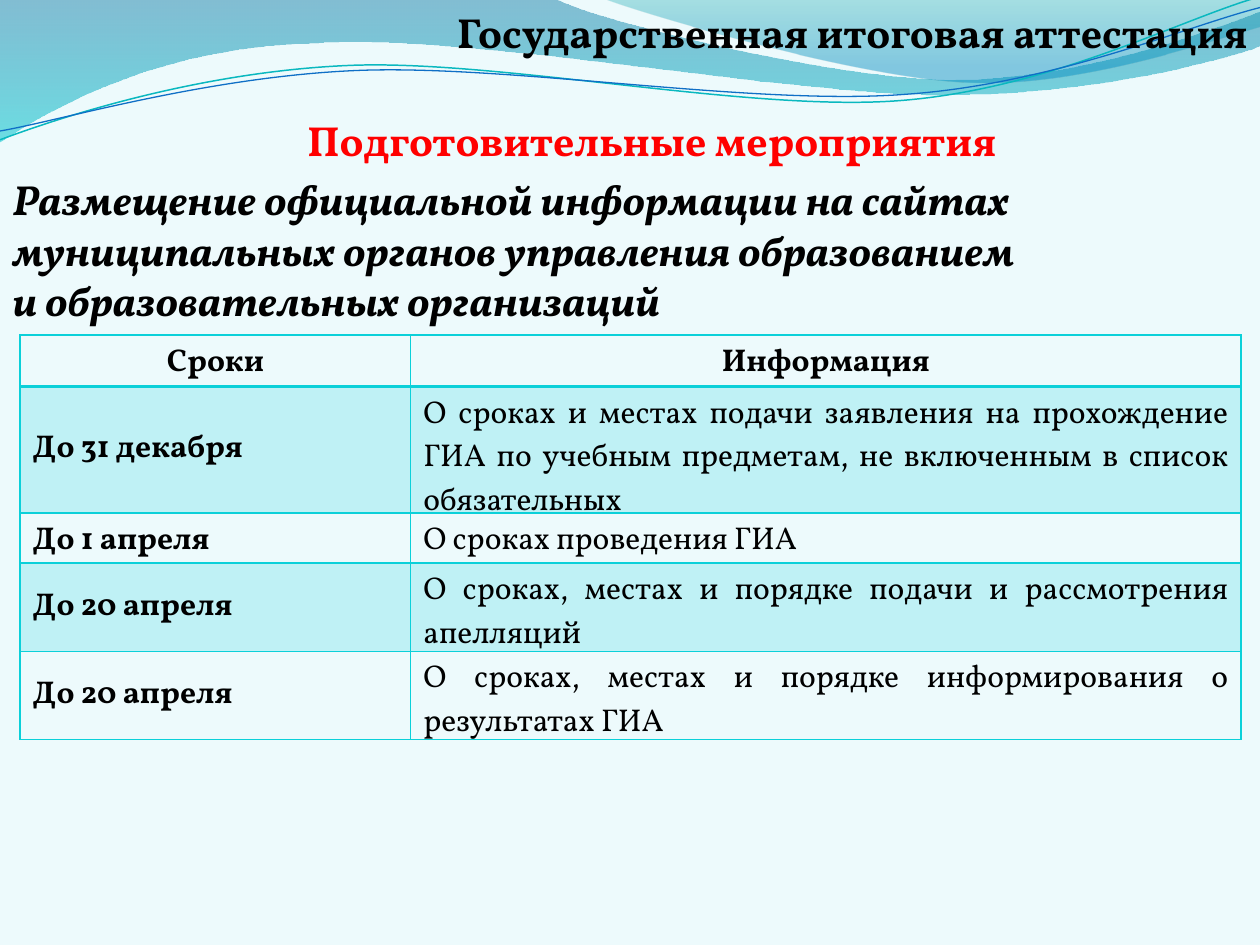
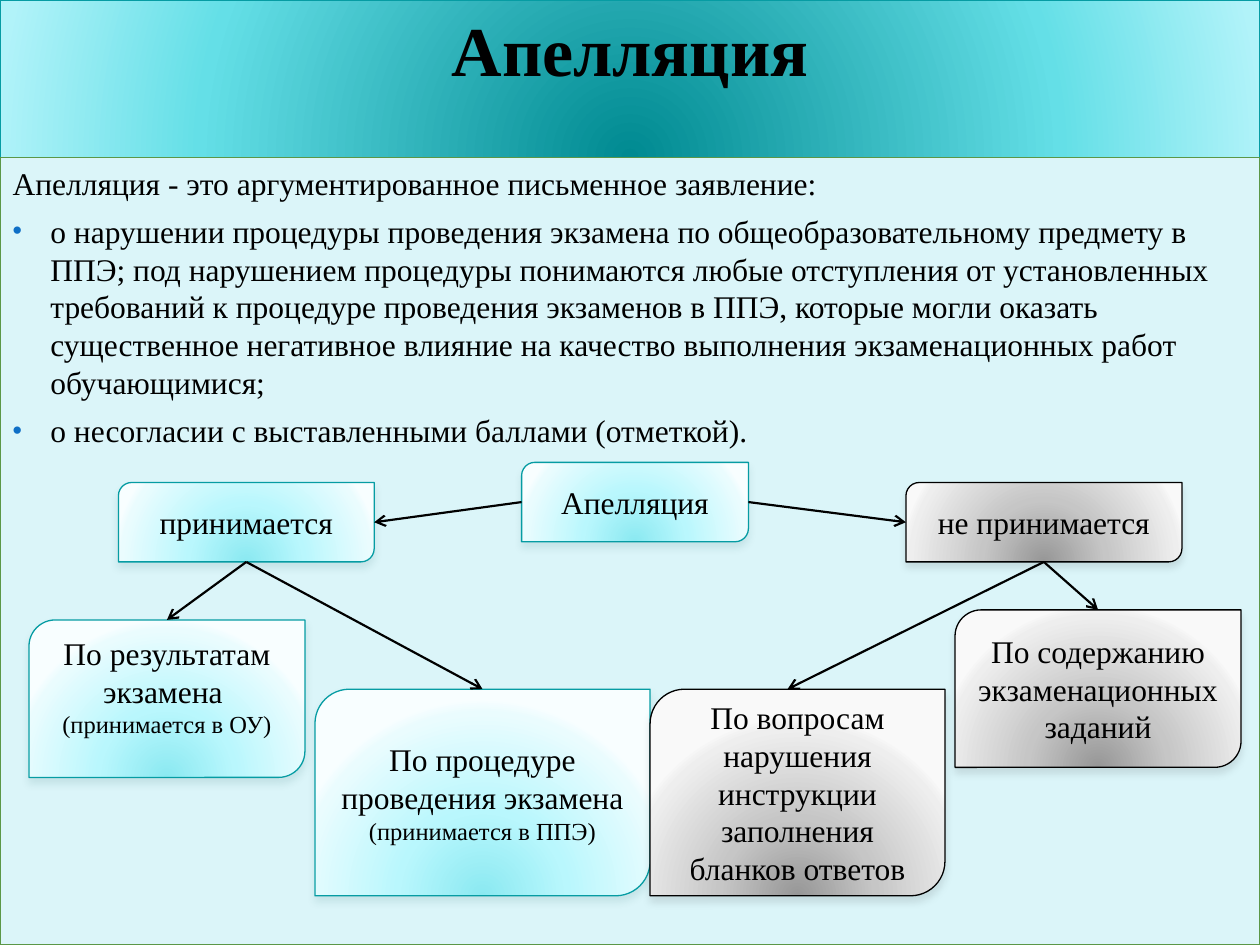
from dataclasses import dataclass
from typing import Any, NamedTuple

import pptx
import pptx.dml.color
import pptx.enum.shapes
import pptx.enum.text
import pptx.oxml
import pptx.oxml.ns
import pptx.util

Inches = pptx.util.Inches
Pt = pptx.util.Pt
qn = pptx.oxml.ns.qn
ALIGN = pptx.enum.text.PP_ALIGN
ANCHOR = pptx.enum.text.MSO_ANCHOR
NS = 'xmlns:a="http://schemas.openxmlformats.org/drawingml/2006/main"'
TOP, LEFT, BOTTOM, RIGHT = range(4)

COLORS = {
    "page": "EDFAFC", "panel": "DBF5F9", "ink": "000000", "red": "FF0000",
    "teal": "069CA3", "shade": "024B4E", "green": "5B9747", "grid": "0BD0D9",
    "wave": "0AB8BF", "blue": "0F6FC6",
}
VOLL = "Vollkorn"
TIMES = "Times New Roman"
FONTS = {
    "head": {"name": VOLL, "size": Pt(24), "bold": True, "italic": False},
    "lead": {"name": VOLL, "size": Pt(24), "bold": True, "italic": True},
    "key": {"name": VOLL, "size": Pt(18), "bold": True},
    "cell": {"name": VOLL, "size": Pt(18), "bold": False},
    "banner": {"name": TIMES, "size": Pt(40), "bold": True},
    "text": {"name": TIMES, "size": Pt(18), "bold": False},
    "note": {"name": TIMES, "size": Pt(14), "bold": False},
}


class Stop(NamedTuple):
    pos: int
    color: str
    alpha: int = 100


RADIAL = '<a:path path="circle"><a:fillToRect l="50000" t="130000" r="50000" b="-30000"/></a:path>'
DOWN = '<a:lin ang="5400000" scaled="0"/>'
BANNER = [Stop(0, "008A91"), Stop(68, "64DFE7"), Stop(100, "B1F3F9")]


class Look(NamedTuple):
    stops: list[Stop]
    line: str
    shade: str


AQUA = Look([Stop(0, "8BE9F1"), Stop(43, "B9F7FD"), Stop(93, "EAFCFE"), Stop(100, "F8FEFF")], "teal", "shade")
GRAY = Look([Stop(0, "979797"), Stop(43, "C6C6C6"), Stop(93, "EEEEEE"), Stop(100, "F9F9F9")], "ink", "ink")


@dataclass
class Card:
    name: str
    box: tuple[float, ...]
    look: Look
    text: str
    note: str = ""
    anchor: Any = ANCHOR.MIDDLE


@dataclass
class Wave:
    steps: list[tuple[float, ...]]
    stops: list[Stop] | None = None
    line: str = ""
    width: float = 0


class Link(NamedTuple):
    start: str
    side: int
    end: str = ""
    port: int = TOP
    point: tuple[float, float] = (0, 0)


WAVES = [
    Wave([(0, 0), (4.4, -0.01), (4.76, 0.17, 6.64, 0.63, 7.58, 0.63),
          (8.53, 0.63, 9.58, 0.26, 10, 0.09), (10.01, 0.36),
          (9.83, 0.44, 8.7, 0.76, 7.46, 0.75), (6.22, 0.75, 3.82, 0.28, 2.57, 0.34),
          (1.29, 0.36, 0.46, 0.83, -0.01, 1.13)],
         [Stop(0, "0074A1", 45), Stop(100, "00C6CF", 55)]),
    Wave([(4.79, -0.01), (5.09, 0.11, 6.82, 0.62, 7.69, 0.65),
          (8.56, 0.69, 9.61, 0.32, 10, 0.21), (10, 0)],
         [Stop(0, "00A1A9", 30), Stop(80, "008BBF", 45)]),
    Wave([(0, 1.11), (0.48, 0.93, 1.58, 0.57, 2.77, 0.52),
          (3.95, 0.47, 5.93, 0.89, 7.13, 0.8), (8.33, 0.71, 9.38, 0.15, 9.98, -0.02)],
         line="wave", width=0.85),
    Wave([(0, 1.04), (0.47, 0.96, 1.64, 0.61, 2.83, 0.56),
          (4.03, 0.51, 5.97, 0.84, 7.17, 0.75), (8.36, 0.67, 9.41, 0.21, 10, 0.06)],
         line="blue", width=0.75),
]
LEAD = [
    "Размещение официальной информации на сайтах",
    "муниципальных органов управления образованием",
    "и образовательных организаций",
]
DATES = [
    (0.41, "Сроки", "Информация"),
    (1.0, "До 31 декабря", "О сроках и местах подачи заявления на прохождение ГИА по учебным предметам, не включенным в список обязательных"),
    (0.4, "До 1 апреля", "О сроках проведения ГИА"),
    (0.7, "До 20 апреля", "О сроках, местах и порядке подачи и рассмотрения апелляций"),
    (0.7, "До 20 апреля", "О сроках, местах и порядке информирования о результатах ГИА"),
]
INTRO = "Апелляция - это аргументированное письменное заявление:"
POINTS = [
    "о нарушении процедуры проведения экзамена по общеобразовательному предмету в ППЭ; под нарушением процедуры понимаются любые отступления от установленных требований к процедуре проведения экзаменов в ППЭ, которые могли оказать существенное негативное влияние на качество выполнения экзаменационных работ обучающимися;",
    "о несогласии с выставленными баллами (отметкой).",
]
CARDS = [
    Card("root", (4.14, 3.67, 1.8, 0.63), AQUA, "Апелляция"),
    Card("no", (7.19, 3.83, 2.19, 0.63), GRAY, "не принимается"),
    Card("yes", (0.94, 3.83, 2.03, 0.63), AQUA, "принимается"),
    Card("score", (0.23, 4.92, 2.19, 1.25), AQUA, "По результатам экзамена ", "(принимается в ОУ)", ANCHOR.TOP),
    Card("order", (2.5, 5.47, 2.66, 1.64), AQUA, "По процедуре проведения экзамена", "(принимается в ППЭ)"),
    Card("forms", (5.16, 5.47, 2.34, 1.64), GRAY, "По вопросам нарушения инструкции заполнения бланков ответов"),
    Card("tasks", (7.58, 4.84, 2.27, 1.25), GRAY, "По содержанию экзаменационных заданий"),
]
LINKS = [
    Link("root", LEFT, "yes", RIGHT),
    Link("root", RIGHT, "no", LEFT),
    Link("yes", BOTTOM, "score"),
    Link("yes", BOTTOM, "order"),
    Link("no", BOTTOM, "tasks"),
    Link("no", BOTTOM, point=(6.25, 5.47)),
]


def rgb(name: str) -> pptx.dml.color.RGBColor:
    return pptx.dml.color.RGBColor.from_string(COLORS[name])


def apply(thing: Any, form: dict[str, Any]) -> None:
    for key, val in form.items():
        setattr(thing, key, val)


def place(shape: Any, box: tuple[float, ...]) -> None:
    apply(shape, dict(zip(("left", "top", "width", "height"), map(Inches, box))))


def tint(color: str, alpha: int = 100) -> str:
    return f'<a:srgbClr val="{color}"><a:alpha val="{alpha * 1000}"/></a:srgbClr>'


def make(xml: str) -> Any:
    return pptx.oxml.parse_xml(f"<a:root {NS}>{xml}</a:root>")[0]


def swap(old: Any, xml: str) -> None:
    old.getparent().replace(old, make(xml))


def blend(shape: Any, stops: list[Stop], mode: str) -> None:
    shape.fill.solid()
    body = "".join(f'<a:gs pos="{s.pos * 1000}">{tint(s.color, s.alpha)}</a:gs>' for s in stops)
    swap(shape.element.spPr.find(qn("a:solidFill")), f"<a:gradFill><a:gsLst>{body}</a:gsLst>{mode}</a:gradFill>")


def stroke(shape: Any, color: str, width: float) -> None:
    shape.line.color.rgb = rgb(color)
    shape.line.width = Pt(width)


def fill_rows(frame: Any, rows: list[tuple[str, str]], align: Any, color: str = "ink") -> None:
    for num, (text, font) in enumerate(rows):
        para = frame.add_paragraph() if num else frame.paragraphs[0]
        para.alignment = align
        run = para.add_run()
        run.text = text
        apply(run.font, FONTS[font])
        run.font.color.rgb = rgb(color)


def write(frame: Any, rows: list[tuple[str, str]], align: Any = ALIGN.LEFT,
          color: str = "ink", anchor: Any = ANCHOR.TOP) -> None:
    apply(frame, {"word_wrap": True, "auto_size": pptx.enum.text.MSO_AUTO_SIZE.NONE,
                  "vertical_anchor": anchor})
    fill_rows(frame, rows, align, color)


def label(slide: Any, box: tuple[float, ...], rows: list[tuple[str, str]], color: str = "ink") -> None:
    shape = slide.shapes.add_textbox(*map(Inches, box))
    write(shape.text_frame, rows, color=color)


def draw_wave(slide: Any, wave: Wave) -> Any:
    first, *rest = [(Inches(step[-2]), Inches(step[-1])) for step in wave.steps]
    pen = slide.shapes.build_freeform(*first)
    pen.add_line_segments(rest, close=bool(wave.stops))
    shape = pen.convert_to_shape()
    parts = list(shape.element.spPr.iter(qn("a:lnTo")))
    for part, step in zip(parts, wave.steps[1:]):
        if len(step) == 6:
            dots = "".join(f'<a:pt x="{Inches(x) - shape.left}" y="{Inches(y) - shape.top}"/>'
                           for x, y in zip(step[::2], step[1::2]))
            swap(part, f"<a:cubicBezTo>{dots}</a:cubicBezTo>")
    shape.shadow.inherit = False
    if wave.stops:
        blend(shape, wave.stops, DOWN)
        shape.line.fill.background()
    else:
        shape.fill.background()
        stroke(shape, wave.line, wave.width)
    return shape.element


def draw_card(slide: Any, card: Card) -> Any:
    kind = pptx.enum.shapes.MSO_SHAPE.ROUND_2_DIAG_RECTANGLE
    shape = slide.shapes.add_shape(kind, *map(Inches, card.box))
    blend(shape, card.look.stops, RADIAL)
    stroke(shape, card.look.line, 0.75)
    shape.shadow.inherit = False
    shape.element.spPr.find(qn("a:effectLst")).append(make(
        f'<a:outerShdw blurRad="{Pt(4.5)}" dist="{Pt(3)}" dir="5400000" rotWithShape="0">'
        f'{tint(COLORS[card.look.shade], 10)}</a:outerShdw>'))
    rows = [(card.text, "text")] + ([(card.note, "note")] if card.note else [])
    write(shape.text_frame, rows, ALIGN.CENTER, anchor=card.anchor)
    return shape


def draw_link(slide: Any, link: Link, cards: dict[str, Any]) -> None:
    ends = map(Inches, (0, 0, *link.point))
    line = slide.shapes.add_connector(pptx.enum.shapes.MSO_CONNECTOR.STRAIGHT, *ends)
    line.begin_connect(cards[link.start], link.side)
    if link.end:
        line.end_connect(cards[link.end], link.port)
    stroke(line, "ink", 1.25)
    line.line._get_or_add_ln().append(make('<a:tailEnd type="arrow"/>'))
    line.element.spPr.append(make("<a:effectLst/>"))


def edge(cell: Any, head: bool) -> None:
    props = cell._tc.get_or_add_tcPr()
    for num, side in enumerate("LRTB"):
        width = Pt(2 if head and side == "B" else 1)
        props.insert(num, make(f'<a:ln{side} w="{width}"><a:solidFill>{tint(COLORS["grid"])}</a:solidFill></a:ln{side}>'))


def draw_table(slide: Any) -> None:
    high = sum(row[0] for row in DATES)
    table = slide.shapes.add_table(len(DATES), 2, *map(Inches, (0.16, 2.66, 9.69, high))).table
    apply(table, {"first_row": False, "horz_banding": False})
    for col, width in zip(table.columns, (3.1, 6.59)):
        col.width = Inches(width)
    for num, (height, *texts) in enumerate(DATES):
        table.rows[num].height = Inches(height)
        lines = round((height - 0.1) / 0.3)
        for col, text in enumerate(texts):
            cell = table.cell(num, col)
            align = ALIGN.CENTER if num == 0 else (ALIGN.LEFT, ALIGN.JUSTIFY)[col]
            fill_rows(cell.text_frame, [(text, "cell" if num and col else "key")], align)
            middle = lines > 1 and col == 0
            cell.vertical_anchor = ANCHOR.MIDDLE if middle else ANCHOR.TOP
            if not middle:
                cell.margin_bottom = Inches(0.05 - 0.05 * lines)
            if num % 2:
                cell.fill.solid()
                swap(cell._tc.tcPr.find(qn("a:solidFill")), f'<a:solidFill>{tint(COLORS["grid"], 20)}</a:solidFill>')
            else:
                cell.fill.background()
            edge(cell, num == 0)


def new_slide(deck: Any, layout: int, title: str, box: tuple[float, ...], font: str, align: Any) -> Any:
    slide = deck.slides.add_slide(deck.slide_layouts[layout])
    place(slide.shapes.title, box)
    write(slide.shapes.title.text_frame, [(title, font)], align)
    return slide


def dress(deck: Any, slide: Any) -> None:
    deck.slide_master.background.fill.solid()
    deck.slide_master.background.fill.fore_color.rgb = rgb("page")
    tree = deck.slide_master.shapes.element if hasattr(deck.slide_master.shapes, "element") else deck.slide_master.shapes._spTree
    for num, wave in enumerate(WAVES):
        shape = draw_wave(slide, wave)
        shape.nvSpPr.cNvPr.set("id", str(100 + num))
        tree.insert(2 + num, shape)


def build_dates(deck: Any) -> None:
    slide = new_slide(deck, 5, "Государственная итоговая аттестация", (3.2, 0, 6.8, 0.5), "head", ALIGN.RIGHT)
    dress(deck, slide)
    label(slide, (2.34, 0.86, 5.78, 0.5), [("Подготовительные мероприятия", "head")], "red")
    draw_table(slide)
    label(slide, (0, 1.33, 10, 1.31), [(text, "lead") for text in LEAD])


def build_appeal(deck: Any) -> None:
    slide = new_slide(deck, 1, "Апелляция", (0, 0, 10, 1.25), "banner", ALIGN.CENTER)
    blend(slide.shapes.title, BANNER, RADIAL)
    stroke(slide.shapes.title, "teal", 0.75)
    body = slide.placeholders[1]
    place(body, (0, 1.25, 10, 6.25))
    body.fill.solid()
    body.fill.fore_color.rgb = rgb("panel")
    stroke(body, "green", 0.75)
    write(body.text_frame, [(text, "text") for text in [INTRO, *POINTS]])
    for num, para in enumerate(body.text_frame.paragraphs):
        para.space_before = Pt(5.8)
        props = para._p.get_or_add_pPr()
        props.set("marL", str(Inches(0.3)))
        props.set("indent", str(-Inches(0.3)))
        marks = ["<a:buNone/>"]
        if num:
            marks = [f'<a:buClr>{tint(COLORS["blue"])}</a:buClr>', '<a:buSzPct val="85000"/>',
                     '<a:buFont typeface="Arial"/>', '<a:buChar char="•"/>']
        for mark in marks:
            props.append(make(mark))
    cards = {card.name: draw_card(slide, card) for card in CARDS}
    for link in LINKS:
        draw_link(slide, link, cards)


def main() -> None:
    deck = pptx.Presentation()
    apply(deck, {"slide_width": Inches(10), "slide_height": Inches(7.5)})
    build_dates(deck)
    build_appeal(deck)
    deck.save("out.pptx")


if __name__ == "__main__":
    main()
